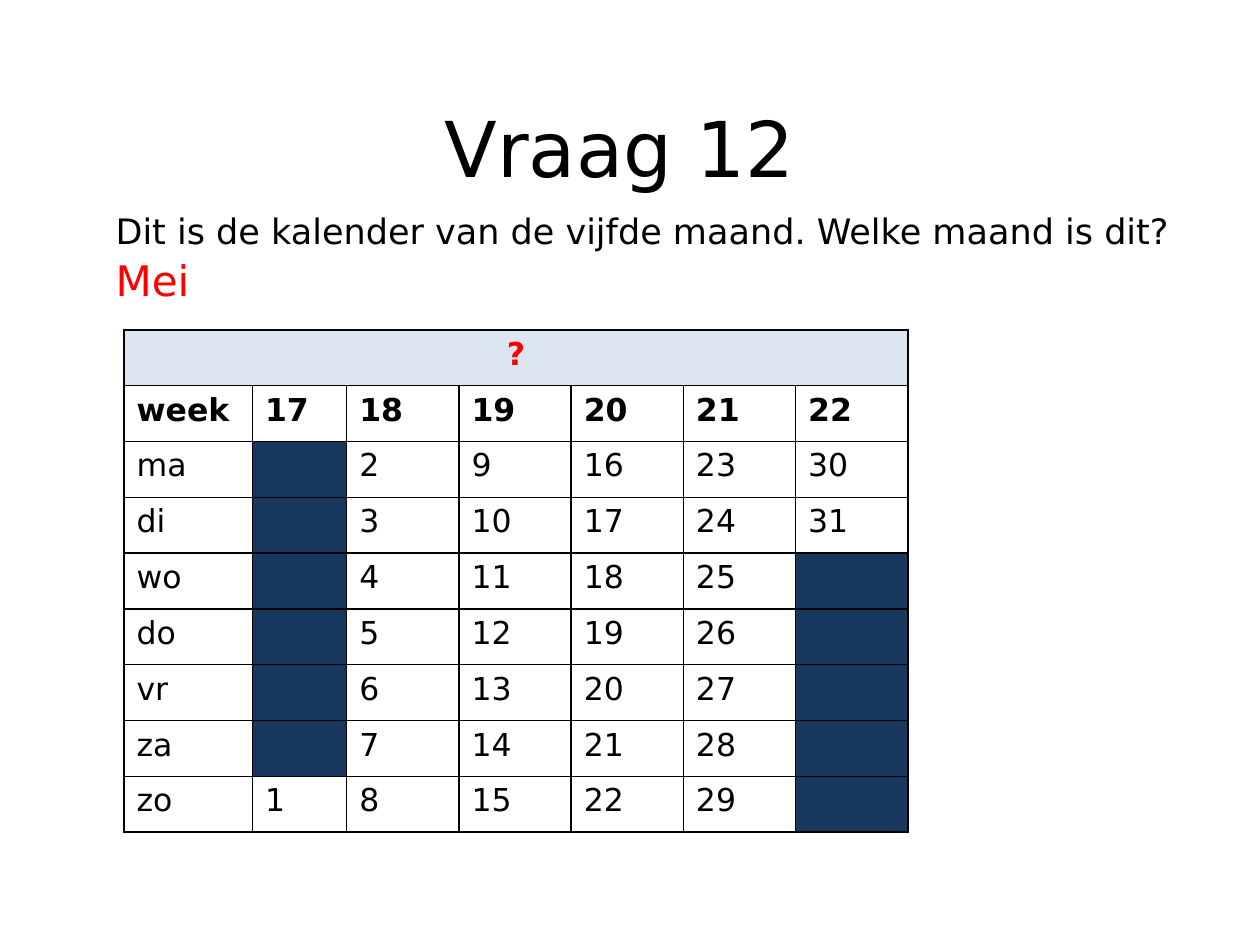
import pptx
import pptx.dml.color
import pptx.enum.shapes
import pptx.enum.text
import pptx.oxml
import pptx.oxml.ns
import pptx.util
from lxml import etree

Cm = pptx.util.Cm
Pt = pptx.util.Pt
RGBColor = pptx.dml.color.RGBColor
ALIGN = pptx.enum.text.PP_ALIGN

BLACK = RGBColor(0x00, 0x00, 0x00)
WHITE = RGBColor(0xFF, 0xFF, 0xFF)
RED = RGBColor(0xFF, 0x00, 0x00)
PALE_BLUE = RGBColor(0xDC, 0xE6, 0xF2)
NAVY = RGBColor(0x17, 0x37, 0x5E)

FONT = "DejaVu Sans"
WEEKDAYS = ["ma", "di", "wo", "do", "vr", "za", "zo"]
WEEKS = range(17, 23)
DAYS_IN_MONTH = 31
FIRST_WEEKDAY = 6  # the month starts on a Sunday, counted from Monday = 0


def write(paragraph, text, size, color=BLACK, bold=False, align=ALIGN.LEFT):
    paragraph.alignment = align
    run = paragraph.add_run()
    run.text = text
    formats = {"name": FONT, "size": Pt(size), "bold": bold}
    for name, value in formats.items():
        setattr(run.font, name, value)
    run.font.color.rgb = color


def add_title(slide, left, top, width, height):
    shape = slide.shapes.add_textbox(left, top, width, height)
    frame = shape.text_frame
    frame.word_wrap = True
    frame.vertical_anchor = pptx.enum.text.MSO_ANCHOR.MIDDLE
    write(frame.paragraphs[0], "Vraag 12", 44, align=ALIGN.CENTER)


def add_question(slide, left, top, width, height):
    # Translucent white panel
    shape = slide.shapes.add_shape(
        pptx.enum.shapes.MSO_SHAPE.RECTANGLE, left, top, width, height)
    shape.shadow.inherit = False
    shape.fill.solid()
    shape.fill.fore_color.rgb = WHITE
    shape.line.fill.background()
    color = shape.fill._xPr.find(".//" + pptx.oxml.ns.qn("a:srgbClr"))
    etree.SubElement(color, pptx.oxml.ns.qn("a:alpha"), val="76000")

    # Question and answer
    frame = shape.text_frame
    frame.word_wrap = True
    frame.vertical_anchor = pptx.enum.text.MSO_ANCHOR.TOP
    question = frame.paragraphs[0]
    answer = frame.add_paragraph()
    answer.space_before = Pt(4.8)
    for paragraph in (question, answer):
        paragraph.line_spacing = 0.9
        properties = paragraph._p.get_or_add_pPr()
        properties.set("marL", str(Cm(0.53)))
        properties.set("indent", str(Cm(0.46)))
    write(question, "Dit is de kalender van de vijfde maand. Welke maand is dit?", 20)
    write(answer, "Mei", 24, RED)


def set_borders(cell):
    properties = cell._tc.get_or_add_tcPr()
    for side in ("lnL", "lnR", "lnT", "lnB"):
        properties.append(pptx.oxml.parse_xml(
            f'<a:{side} {pptx.oxml.ns.nsdecls("a")} w="{Pt(1)}"><a:solidFill>'
            f'<a:srgbClr val="{BLACK}"/></a:solidFill></a:{side}>'))


def fill_cell(cell, color):
    cell.fill.solid()
    cell.fill.fore_color.rgb = color


def add_calendar(slide, left, top, width, height):
    row_count, column_count = len(WEEKDAYS) + 2, len(WEEKS) + 1
    table = slide.shapes.add_table(
        row_count, column_count, left, top, width, height).table
    table.first_row = False
    table.horz_banding = False

    # Grid: two special columns, the rest share the remaining width
    special = [Cm(2.59), Cm(1.9)]
    others = column_count - len(special)
    widths = special + [(width - sum(special)) // others] * others
    for column, column_width in zip(table.columns, widths):
        column.width = column_width
    for row in table.rows:
        row.height = height // row_count
        for cell in row.cells:
            set_borders(cell)
            cell.fill.background()

    # Month heading
    heading = table.cell(0, 0)
    heading.merge(table.cell(0, column_count - 1))
    fill_cell(heading, PALE_BLUE)
    write(heading.text_frame.paragraphs[0], "?", 18, RED, True, ALIGN.CENTER)

    # Week numbers
    for column, text in enumerate(["week", *WEEKS]):
        paragraph = table.cell(1, column).text_frame.paragraphs[0]
        write(paragraph, str(text), 18, bold=True)

    # Weekdays and dates; days outside the month are dark
    for weekday, name in enumerate(WEEKDAYS):
        row = weekday + 2
        write(table.cell(row, 0).text_frame.paragraphs[0], name, 18)
        for week in range(len(WEEKS)):
            cell = table.cell(row, week + 1)
            day = 7 * week + weekday - FIRST_WEEKDAY + 1
            if 1 <= day <= DAYS_IN_MONTH:
                write(cell.text_frame.paragraphs[0], str(day), 18)
            else:
                fill_cell(cell, NAVY)


def main():
    presentation = pptx.Presentation()
    presentation.slide_width = Cm(25.4)
    presentation.slide_height = Cm(19.05)
    slide = presentation.slides.add_slide(presentation.slide_layouts[6])
    add_title(slide, Cm(1.7), Cm(0.91), Cm(21.59), Cm(4.09))
    add_question(slide, Cm(1.09), Cm(4.19), Cm(23.01), Cm(13.13))
    add_calendar(slide, Cm(2.5), Cm(6.65), Cm(15.8), Cm(10.13))
    presentation.save("out.pptx")


if __name__ == "__main__":
    main()
